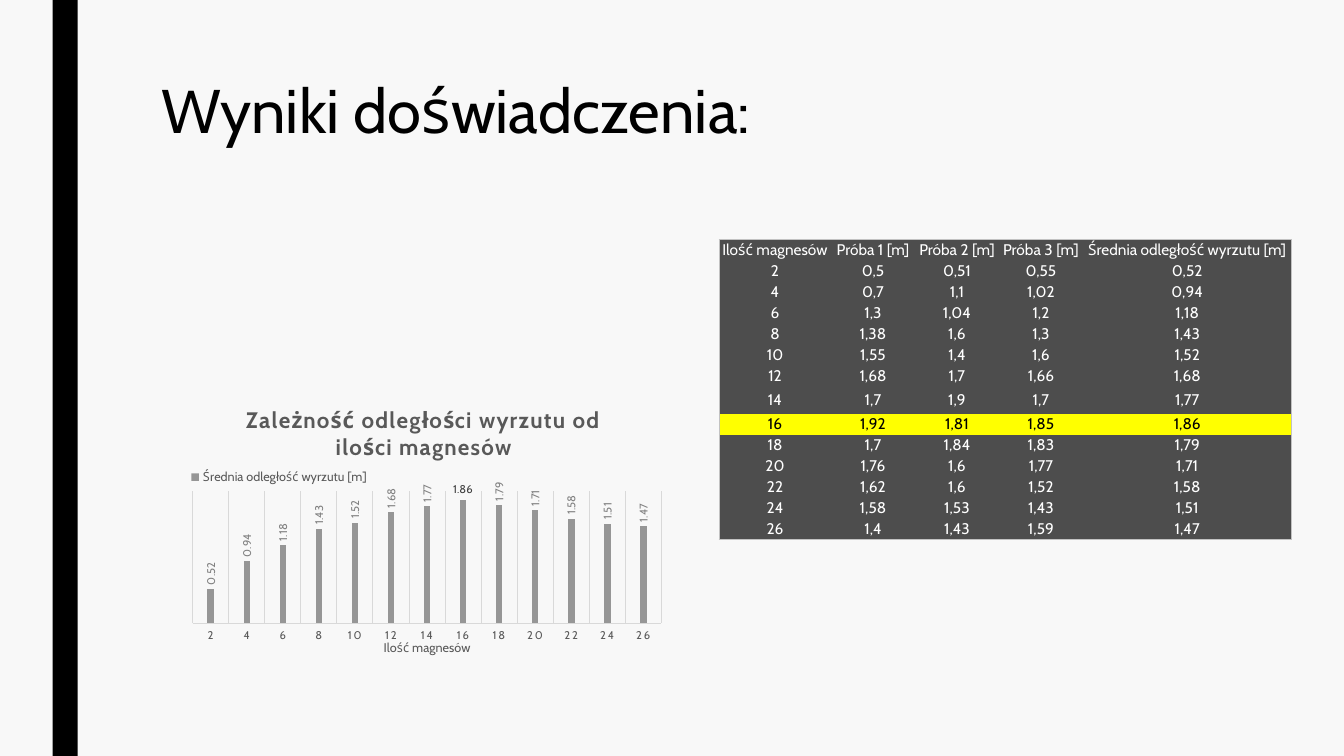
"""Build the slide with the results of the magnet launcher experiment."""
from lxml.etree import SubElement
from pptx import Presentation
from pptx.chart.data import CategoryChartData
from pptx.dml.color import RGBColor
from pptx.enum.chart import XL_CHART_TYPE, XL_LABEL_POSITION, XL_LEGEND_POSITION, XL_TICK_MARK
from pptx.enum.shapes import MSO_SHAPE
from pptx.enum.text import MSO_ANCHOR, PP_ALIGN
from pptx.oxml import parse_xml
from pptx.oxml.ns import nsdecls, qn
from pptx.util import Pt

FACE = "Cabin"
HUES = {
    "back": "F8F8F8", "black": "000000", "white": "FFFFFF", "cell": "4D4D4D",
    "mark": "FFFF00", "edge": "C2C2C2", "grid": "D9D9D9", "bar": "969696",
    "text": "595959", "value": "808080", "peak": "404040",
}


def style(font, size, hue, bold=False, gap=0):
    """Set face, size, colour, weight and letter spacing of a font."""
    font.name, font.size, font.bold = FACE, Pt(size), bold
    font.color.rgb = RGBColor.from_string(HUES[hue])
    if gap:
        font._element.set("spc", str(gap))


def place(part, tag, x, y, **size):
    """Pin a chart part at fractions of the chart area."""
    for old in part.findall(qn("c:layout")):
        part.remove(old)
    layout = parse_xml(f"<c:layout {nsdecls('c')}><c:manualLayout/></c:layout>")
    manual = layout[0]
    if size:
        SubElement(manual, qn("c:layoutTarget")).set("val", "inner")
    for key, val in {"xMode": "edge", "yMode": "edge", "x": x, "y": y, **size}.items():
        SubElement(manual, qn(f"c:{key}")).set("val", str(val))
    prior = part.find(qn(tag)) if tag else None
    if prior is None:
        part.insert(0, layout)
    else:
        prior.addnext(layout)


deck = Presentation()
deck.slide_width, deck.slide_height = Pt(960), Pt(540)
slide = deck.slides.add_slide(deck.slide_layouts[6])
slide.background.fill.solid()
slide.background.fill.fore_color.rgb = RGBColor.from_string(HUES["back"])

band = slide.shapes.add_shape(MSO_SHAPE.RECTANGLE, Pt(37.5), 0, Pt(18), Pt(540))
band.shadow.inherit = False
band.fill.solid()
band.fill.fore_color.rgb = RGBColor.from_string(HUES["black"])
band.line.fill.background()

frame = slide.shapes.add_textbox(Pt(108), Pt(54), Pt(756), Pt(117)).text_frame
frame.word_wrap = True
head = frame.paragraphs[0]
head.text = "Wyniki doświadczenia:"
head.line_spacing = 0.89
style(head.font, 44, "black")

rows = [
    ["Ilość magnesów", "Próba 1 [m]", "Próba 2 [m]", "Próba 3 [m]", "Średnia odległość wyrzutu [m]"],
    ["2", "0,5", "0,51", "0,55", "0,52"],
    ["4", "0,7", "1,1", "1,02", "0,94"],
    ["6", "1,3", "1,04", "1,2", "1,18"],
    ["8", "1,38", "1,6", "1,3", "1,43"],
    ["10", "1,55", "1,4", "1,6", "1,52"],
    ["12", "1,68", "1,7", "1,66", "1,68"],
    ["14", "1,7", "1,9", "1,7", "1,77"],
    ["16", "1,92", "1,81", "1,85", "1,86"],
    ["18", "1,7", "1,84", "1,83", "1,79"],
    ["20", "1,76", "1,6", "1,77", "1,71"],
    ["22", "1,62", "1,6", "1,52", "1,58"],
    ["24", "1,58", "1,53", "1,43", "1,51"],
    ["26", "1,4", "1,43", "1,59", "1,47"],
]
wides = [80, 60, 60, 60, 149]
table = slide.shapes.add_table(
    len(rows), len(wides), Pt(513.6), Pt(171), Pt(sum(wides)), Pt(214.4)).table
table.first_row = table.horz_banding = False
table._tbl.tblPr.find(qn("a:tableStyleId")).text = "{2D5ABB26-0587-4C30-8999-92F81FD0307C}"
for col, wide in zip(table.columns, wides):
    col.width = Pt(wide)
for r, row in enumerate(rows):
    table.rows[r].height = Pt(19.4 if row[0] == "14" else 15)
    best = row[0] == "16"
    for c, word in enumerate(row):
        cell = table.cell(r, c)
        cell.margin_left = cell.margin_right = cell.margin_top = Pt(0.6)
        cell.margin_bottom = 0
        cell.vertical_anchor = MSO_ANCHOR.MIDDLE
        para = cell.text_frame.paragraphs[0]
        para.text = word
        para.alignment = PP_ALIGN.CENTER
        style(para.font, 11, "black" if best else "white")
        sides = {"L": c == 0, "R": c == len(wides) - 1, "T": r == 0, "B": r == len(rows) - 1}
        for side, outer in sides.items():
            if outer:
                line = SubElement(cell._tc.get_or_add_tcPr(), qn(f"a:ln{side}"), w="6350")
                SubElement(SubElement(line, qn("a:solidFill")), qn("a:srgbClr"), val=HUES["edge"])
        cell.fill.solid()
        cell.fill.fore_color.rgb = RGBColor.from_string(HUES["mark" if best else "cell"])

data = CategoryChartData(number_format="0.00")
data.categories = [row[0] for row in rows[1:]]
data.add_series(rows[0][-1], [float(row[-1].replace(",", ".")) for row in rows[1:]])
chart = slide.shapes.add_chart(
    XL_CHART_TYPE.COLUMN_CLUSTERED, Pt(126.7), Pt(275.8), Pt(353.5), Pt(195), data).chart
style(chart.font, 10, "black")
place(chart._chartSpace.chart.plotArea, None, 0.031, 0.385, w=0.947, h=0.485)

chart.has_title = True
title = chart.chart_title
title.text_frame.text = "Zależność odległości wyrzutu od ilości magnesów"
style(title.text_frame.paragraphs[0].font, 16, "text", True, 100)
place(title._element, "c:tx", 0.13, 0.055)
title.include_in_layout = False

chart.has_legend = True
legend = chart.legend
legend.position = XL_LEGEND_POSITION.TOP
legend.include_in_layout = False
style(legend.font, 9, "text")
place(legend._element, "c:legendPos", 0.02, 0.29)

axis = chart.category_axis
axis.major_tick_mark = axis.minor_tick_mark = XL_TICK_MARK.NONE
axis.has_major_gridlines = True
for line in (axis.format.line, axis.major_gridlines.format.line):
    line.color.rgb = RGBColor.from_string(HUES["grid"])
    line.width = Pt(0.75)
style(axis.tick_labels.font, 8, "text", gap=120)
axis.axis_title.text_frame.text = "Ilość magnesów"
style(axis.axis_title.text_frame.paragraphs[0].font, 9, "text")

scale = chart.value_axis
scale.minimum_scale, scale.maximum_scale = 0, 2
scale.has_major_gridlines = False
scale.visible = False

plot = chart.plots[0]
plot.gap_width, plot.overlap, plot.vary_by_categories = 444, -90, False
bars = plot.series[0]
bars.format.fill.solid()
bars.format.fill.fore_color.rgb = RGBColor.from_string(HUES["bar"])
marks = bars.data_labels
marks.show_value = True
marks.number_format, marks.number_format_is_linked = "0.00", False
marks.position = XL_LABEL_POSITION.OUTSIDE_END
style(marks.font, 8, "value")
turn = marks._element.find(qn("c:txPr")).find(qn("a:bodyPr"))
turn.set("rot", "-5400000")
turn.set("vert", "horz")
peak = bars.points[7].data_label
peak.text_frame.text = "1.86"
style(peak.text_frame.paragraphs[0].runs[0].font, 8, "peak")
peak.position = XL_LABEL_POSITION.OUTSIDE_END

deck.save("out.pptx")
